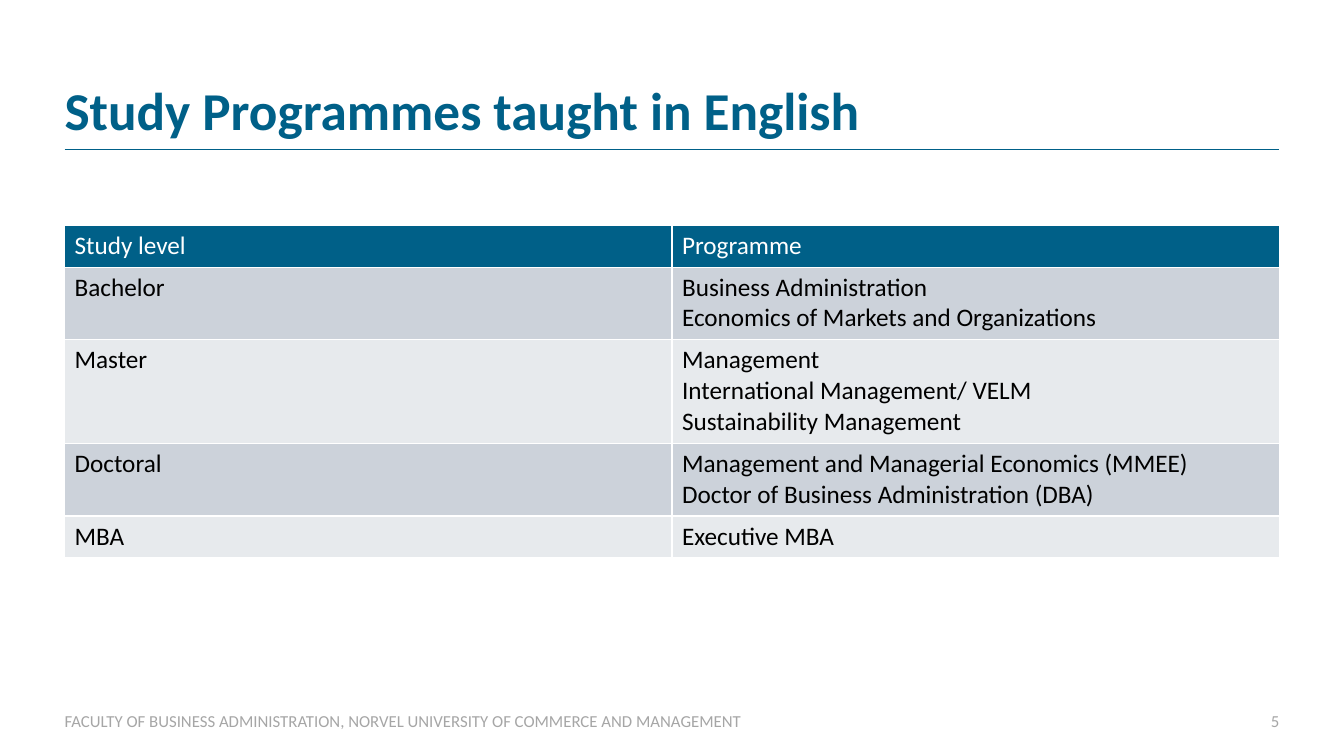
from pptx import Presentation
from pptx.dml.color import RGBColor
from pptx.enum.shapes import MSO_CONNECTOR
from pptx.enum.text import MSO_ANCHOR, MSO_AUTO_SIZE, PP_ALIGN
from pptx.oxml.ns import qn
from pptx.util import Inches, Pt
from lxml.etree import SubElement

TEAL = RGBColor(0x00, 0x60, 0x88)
WHITE = RGBColor(0xFF, 0xFF, 0xFF)
BLACK = RGBColor(0x00, 0x00, 0x00)
GREY = RGBColor(0xA6, 0xA6, 0xA6)
BANDS = [RGBColor(0xCC, 0xD2, 0xDA), RGBColor(0xE7, 0xEA, 0xED)]

FONT = "Calibri"
LEFT, WIDTH = 0.64, 12.05
LINE_HEIGHT, CELL_PADDING = 0.31, 0.1

PROGRAMMES = [
    ("Study level", ["Programme"]),
    ("Bachelor", ["Business Administration", "Economics of Markets and Organizations"]),
    ("Master", ["Management", "International Management/ VELM", "Sustainability Management"]),
    ("Doctoral", ["Management and Managerial Economics (MMEE)",
                  "Doctor of Business Administration (DBA)"]),
    ("MBA", ["Executive MBA"]),
]
FACULTY = "FACULTY OF BUSINESS ADMINISTRATION, NORVEL UNIVERSITY OF COMMERCE AND MANAGEMENT"


def write(frame, lines, size, color, bold=False, align=PP_ALIGN.LEFT, spacing=1.0):
    """Fill a text frame with one paragraph per line."""
    for index, line in enumerate(lines):
        paragraph = frame.paragraphs[0] if index == 0 else frame.add_paragraph()
        paragraph.alignment = align
        paragraph.line_spacing = spacing
        run = paragraph.add_run()
        run.text = line
        run.font.name = FONT
        run.font.size = Pt(size)
        run.font.bold = bold
        run.font.color.rgb = color


def fit_frame(frame, anchor):
    """Wrap the text and remove the margins."""
    frame.word_wrap = True
    frame.auto_size = MSO_AUTO_SIZE.NONE
    frame.vertical_anchor = anchor
    frame.margin_left = frame.margin_top = frame.margin_right = frame.margin_bottom = 0


def add_heading(slide, left, top, width, height):
    title = slide.shapes.title
    title.left, title.top = Inches(left), Inches(top)
    title.width, title.height = Inches(width), Inches(height)
    fit_frame(title.text_frame, MSO_ANCHOR.BOTTOM)
    write(title.text_frame, ["Study Programmes taught in English"], 38, TEAL,
          bold=True, spacing=0.9)

    rule_y = Inches(top + height + 0.07)
    rule = slide.shapes.add_connector(
        MSO_CONNECTOR.STRAIGHT, Inches(left), rule_y, Inches(left + width), rule_y)
    rule.line.color.rgb = TEAL
    rule.line.width = Pt(0.25)
    SubElement(rule.element.spPr, qn("a:effectLst"))


def add_programme_table(slide, left, top, width):
    heights = [CELL_PADDING + LINE_HEIGHT * len(names) for _, names in PROGRAMMES]
    table = slide.shapes.add_table(
        len(PROGRAMMES), 2, Inches(left), Inches(top),
        Inches(width), Inches(sum(heights))).table
    for index, (level, names) in enumerate(PROGRAMMES):
        table.rows[index].height = Inches(heights[index])
        is_header = index == 0
        for cell, lines in zip(table.rows[index].cells, ([level], names)):
            cell.fill.solid()
            cell.fill.fore_color.rgb = TEAL if is_header else BANDS[(index - 1) % 2]
            write(cell.text_frame, lines, 18, WHITE if is_header else BLACK)


def add_footer(slide, left, top, width, height):
    number_width = 0.51
    parts = [
        (FACULTY, left, 10.16, PP_ALIGN.LEFT),
        ("5", left + width - number_width, number_width, PP_ALIGN.RIGHT),
    ]
    for text, part_left, part_width, align in parts:
        box = slide.shapes.add_textbox(
            Inches(part_left), Inches(top), Inches(part_width), Inches(height))
        fit_frame(box.text_frame, MSO_ANCHOR.MIDDLE)
        write(box.text_frame, [text], 12, GREY, align=align)


def main():
    deck = Presentation()
    deck.slide_width, deck.slide_height = Inches(13.33), Inches(7.5)
    slide = deck.slides.add_slide(deck.slide_layouts.get_by_name("Title Only"))
    add_heading(slide, LEFT, 0.83, WIDTH, 0.58)
    add_programme_table(slide, LEFT, 2.24, WIDTH)
    add_footer(slide, LEFT, 7.05, WIDTH, 0.2)
    deck.save("out.pptx")


if __name__ == "__main__":
    main()
